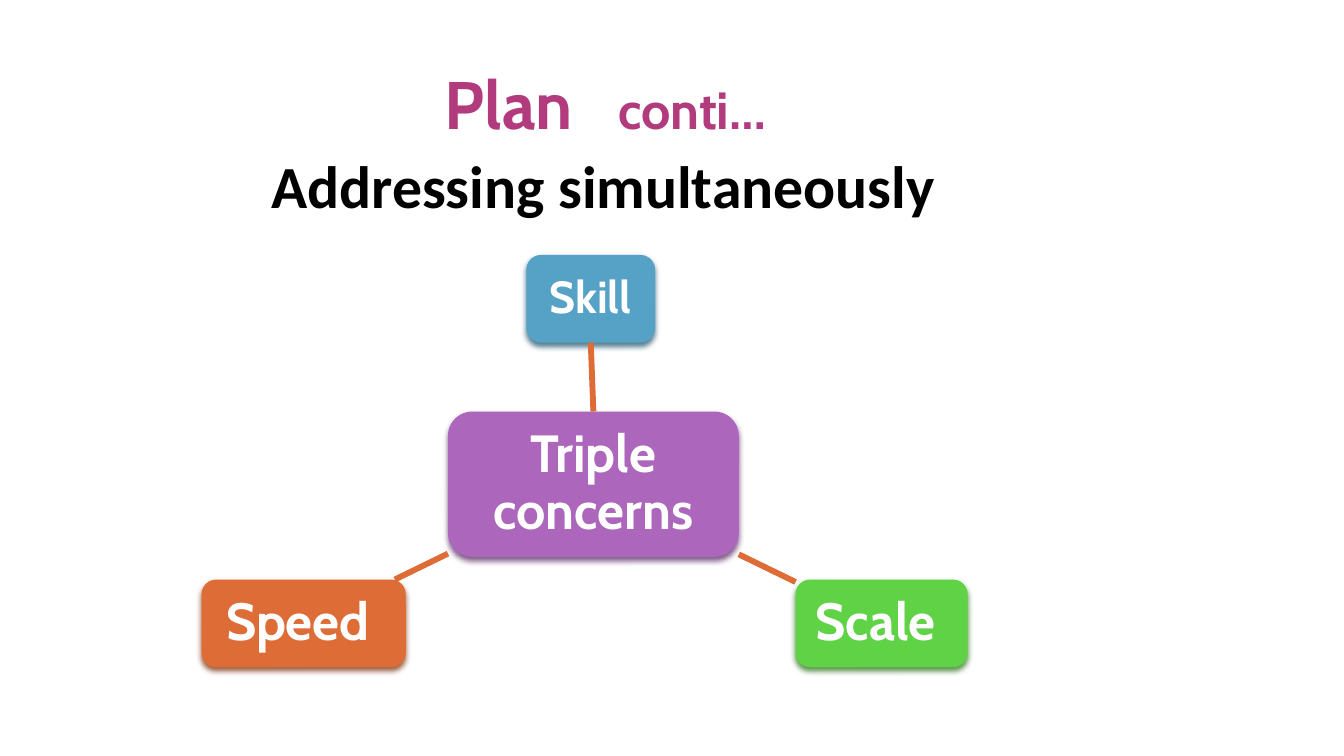
from lxml import etree
from pptx import Presentation
from pptx.dml.color import RGBColor
from pptx.enum.shapes import MSO_CONNECTOR as CONNECTOR, MSO_SHAPE as SHAPE
from pptx.enum.text import MSO_ANCHOR as ANCHOR, MSO_AUTO_SIZE as AUTO_SIZE, PP_ALIGN as ALIGN
from pptx.oxml.ns import qn
from pptx.util import Pt

WHITE, BLACK, MAGENTA = "FFFFFF", "000000", "B23B7E"
PURPLE, BLUE, GREEN, ORANGE = "AC66BB", "56A2C6", "5FD246", "DE6C36"


def color(value):
    return RGBColor.from_string(value)


class ConcernSlide:
    heading_font = "Cabin"
    body_font = "Calibri"
    link_color = ORANGE
    link_width = 3.15

    def __init__(self, presentation):
        self.slide = presentation.slides.add_slide(presentation.slide_layouts[5])

    def style(self, font, name, size, tint):
        font.name = name
        font.size = Pt(size)
        font.bold = True
        font.color.rgb = color(tint)

    def title(self, main, suffix, left, top, width, height):
        heading = self.slide.shapes.title
        heading.left, heading.top = Pt(left), Pt(top)
        heading.width, heading.height = Pt(width), Pt(height)
        frame = heading.text_frame
        frame.auto_size = AUTO_SIZE.NONE
        frame.vertical_anchor = ANCHOR.BOTTOM
        frame.margin_left = frame.margin_right = Pt(3.6)
        frame.margin_top = frame.margin_bottom = 0
        paragraph = frame.paragraphs[0]
        paragraph.alignment = ALIGN.CENTER
        for text, size, spacing in ((main, 36, 0), (" ", 36, 8), (suffix, 28, 0)):
            run = paragraph.add_run()
            run.text = text
            self.style(run.font, self.heading_font, size, MAGENTA)
            if spacing:
                run._r.get_or_add_rPr().set("spc", str(spacing * 100))

    def subtitle(self, text, left, top, width, height):
        box = self.slide.shapes.add_textbox(Pt(left), Pt(top), Pt(width), Pt(height))
        frame = box.text_frame
        frame.auto_size = AUTO_SIZE.SHAPE_TO_FIT_TEXT
        frame.word_wrap = False
        frame.text = text
        self.style(frame.paragraphs[0].font, self.body_font, 32, BLACK)

    def shadow(self, shape, tint):
        effects = etree.SubElement(shape._element.spPr, qn("a:effectLst"))
        outer = etree.SubElement(
            effects, qn("a:outerShdw"), blurRad=str(Pt(3.1)), dist=str(Pt(2)),
            dir="5400000", algn="ctr", rotWithShape="0")
        shade = etree.SubElement(outer, qn("a:srgbClr"), val=tint)
        etree.SubElement(shade, qn("a:alpha"), val="83000")

    def concern(self, text, left, top, width, height, fill, shade, size=28):
        card = self.slide.shapes.add_shape(
            SHAPE.ROUNDED_RECTANGLE, Pt(left), Pt(top), Pt(width), Pt(height))
        card.fill.solid()
        card.fill.fore_color.rgb = color(fill)
        card.line.fill.background()
        self.shadow(card, shade)
        frame = card.text_frame
        frame.word_wrap = True
        frame.vertical_anchor = ANCHOR.MIDDLE
        frame.margin_left = frame.margin_right = Pt(8)
        frame.margin_top = frame.margin_bottom = Pt(8)
        frame.text = text
        paragraph = frame.paragraphs[0]
        paragraph.alignment = ALIGN.CENTER
        paragraph.line_spacing = 0.9
        self.style(paragraph.font, self.heading_font, size, WHITE)
        return card

    def link(self, x1=0, y1=0, x2=0, y2=0):
        line = self.slide.shapes.add_connector(
            CONNECTOR.STRAIGHT, Pt(x1), Pt(y1), Pt(x2), Pt(y2))
        line.line.color.rgb = color(self.link_color)
        line.line.width = Pt(self.link_width)
        etree.SubElement(line._element.spPr, qn("a:effectLst"))
        return line


def main():
    presentation = Presentation()
    presentation.slide_width, presentation.slide_height = Pt(720), Pt(405)
    plan = ConcernSlide(presentation)
    plan.title("Plan ", "conti…", 92.2, 16.6, 464.4, 59.8)

    center = plan.concern("Triple concerns", 240, 220.5, 155.8, 77.8, PURPLE, "6A3F73")
    skill = plan.concern("Skill ", 282, 136.6, 69, 47, BLUE, "35647A", 24)
    skill_link = plan.link()
    skill_link.begin_connect(center, 0)
    skill_link.end_connect(skill, 2)

    plan.link(395.8, 297, 426.2, 311.8)
    plan.concern("Scale ", 426.2, 310.5, 92.2, 47, GREEN, "3B822C")
    plan.link(240, 296.6, 211.5, 310.5)
    plan.concern("Speed ", 108, 310.5, 109.4, 47, ORANGE, "894321")

    plan.subtitle("Addressing simultaneously", 138.2, 76.3, 373, 46.1)
    presentation.save("out.pptx")


if __name__ == "__main__":
    main()
